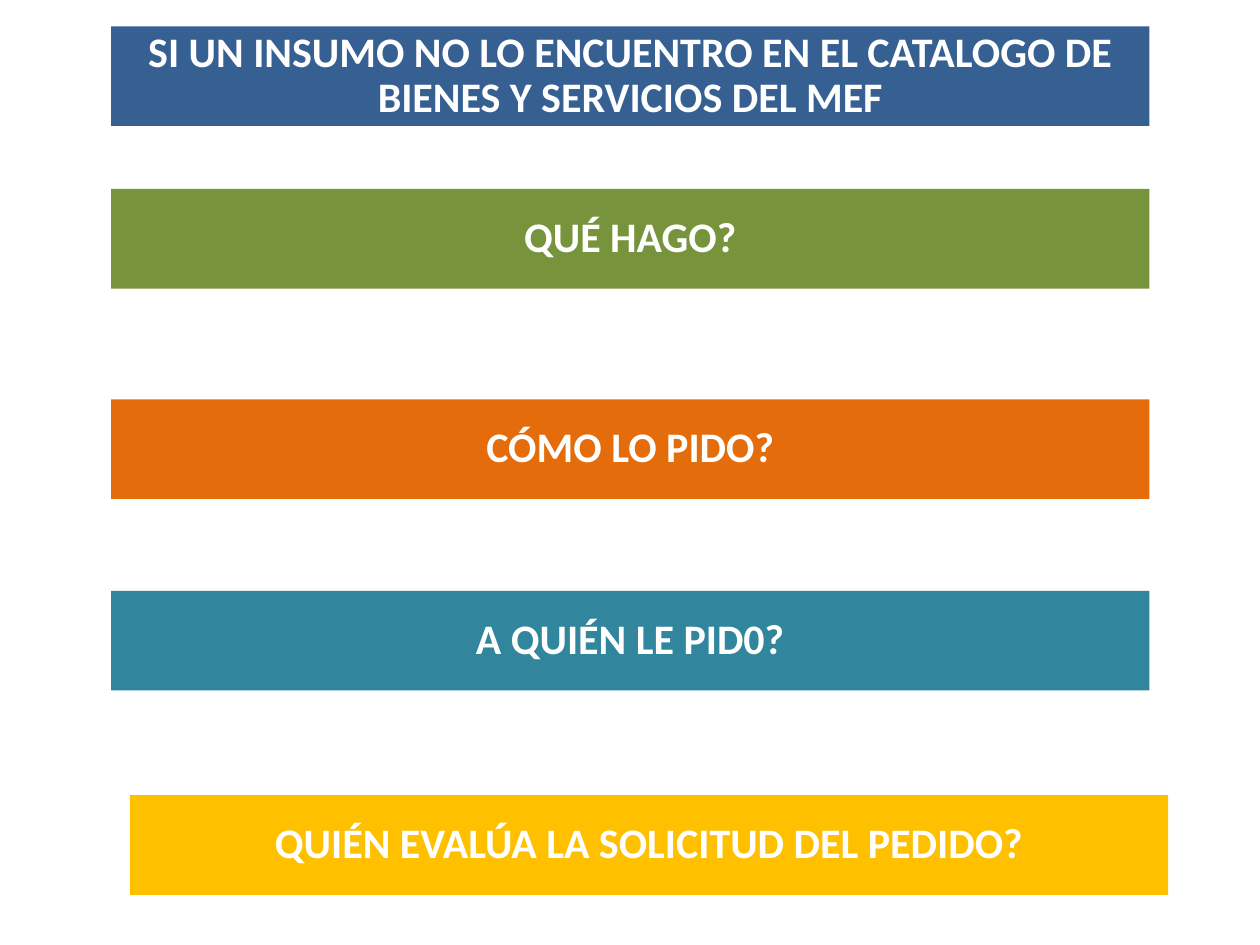
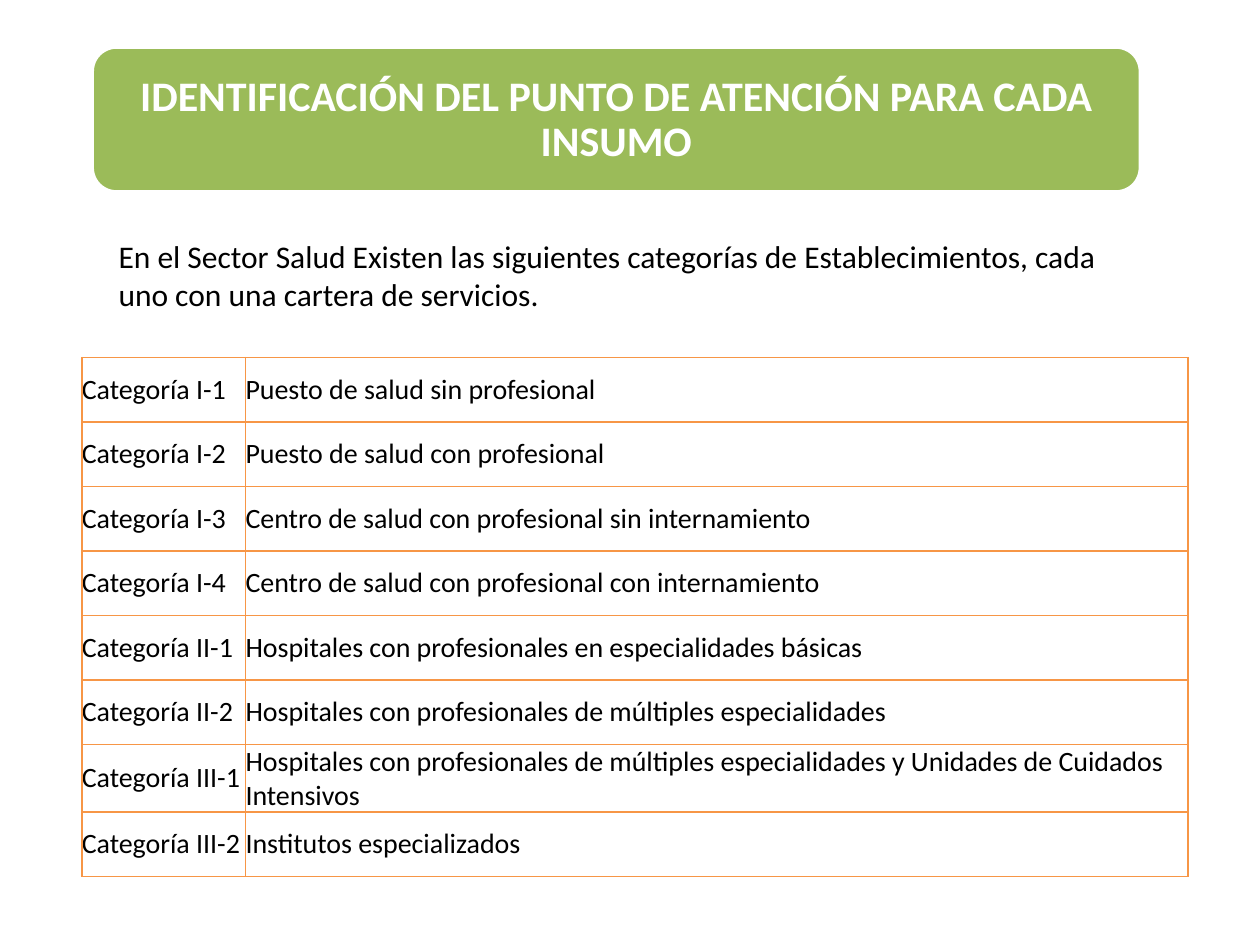
from dataclasses import dataclass

from lxml import etree
from pptx import Presentation
from pptx import util as u
from pptx.dml.color import RGBColor
from pptx.enum import shapes, text
from pptx.oxml import ns

FONT = "Calibri"
WHITE = RGBColor(0xFF, 0xFF, 0xFF)
BLACK = RGBColor(0x00, 0x00, 0x00)
NAVY = RGBColor(0x37, 0x60, 0x92)
OLIVE = RGBColor(0x77, 0x93, 0x3C)
ORANGE = RGBColor(0xE4, 0x6C, 0x0A)
TEAL = RGBColor(0x31, 0x85, 0x9C)
GOLD = RGBColor(0xFF, 0xC0, 0x00)
GREEN = RGBColor(0x9B, 0xBB, 0x59)
GRID_ORANGE = RGBColor(0xF7, 0x96, 0x46)

TITLE_ONLY = 5
BAND_LEFT = 2.24
BAND_WIDTH = 20.93
BAND_HEIGHT = 2.01
ROW_HEIGHT = 1.3
COLUMN_WIDTHS = (3.3, 19.0)


@dataclass(frozen=True)
class Box:
    """Position and size in centimetres."""
    left: float
    top: float
    width: float
    height: float

    def lengths(self) -> tuple:
        """Return the four values as lengths."""
        return tuple(u.Cm(v) for v in (self.left, self.top, self.width, self.height))


@dataclass(frozen=True)
class Question:
    """One coloured question band."""
    wording: str
    top: float
    color: RGBColor
    left: float = BAND_LEFT


QUESTIONS = (
    Question("QUÉ HAGO?", 3.81, OLIVE),
    Question("CÓMO LO PIDO?", 8.05, ORANGE),
    Question("A QUIÉN LE PID0?", 11.91, TEAL),
    Question("QUIÉN EVALÚA LA SOLICITUD DEL PEDIDO?", 16.03, GOLD, left=2.62),
)

CATEGORIES = (
    ("Categoría I-1", "Puesto de salud sin profesional"),
    ("Categoría I-2", "Puesto de salud con profesional"),
    ("Categoría I-3", "Centro de salud con profesional sin internamiento"),
    ("Categoría I-4", "Centro de salud con profesional con internamiento"),
    ("Categoría II-1", "Hospitales con profesionales en especialidades básicas"),
    ("Categoría II-2", "Hospitales con profesionales de múltiples especialidades"),
    ("Categoría III-1", "Hospitales con profesionales de múltiples especialidades "
                        "y Unidades de Cuidados Intensivos"),
    ("Categoría III-2", "Institutos especializados"),
)


def write(frame, wording: str, *, size: int, color=BLACK, bold=False,
          align=text.PP_ALIGN.LEFT, spacing=1.0) -> None:
    """Write one formatted paragraph."""
    paragraph = frame.paragraphs[0]
    paragraph.alignment = align
    paragraph.line_spacing = spacing
    run = paragraph.add_run()
    run.text = wording
    run.font.name = FONT
    run.font.size = u.Pt(size)
    run.font.bold = bold
    run.font.color.rgb = color


def write_heading(shape, wording: str) -> None:
    """Write bold white centred text inside a band or title."""
    frame = shape.text_frame
    frame.word_wrap = True
    frame.auto_size = text.MSO_AUTO_SIZE.NONE
    frame.vertical_anchor = text.MSO_ANCHOR.MIDDLE
    frame.margin_left = frame.margin_right = u.Cm(0.25)
    frame.margin_top = frame.margin_bottom = u.Cm(0.25)
    write(frame, wording, size=24, color=WHITE, bold=True,
          align=text.PP_ALIGN.CENTER, spacing=0.9)


def place_title(slide, wording: str, box: Box):
    """Move and format the title placeholder."""
    title = slide.shapes.title
    title.left, title.top, title.width, title.height = box.lengths()
    write_heading(title, wording)
    return title


def add_band(slide, box: Box, color: RGBColor, outline=shapes.MSO_SHAPE.RECTANGLE):
    """Add a filled band without line or shadow."""
    band = slide.shapes.add_shape(outline, *box.lengths())
    band.shadow.inherit = False
    band.fill.solid()
    band.fill.fore_color.rgb = color
    band.line.fill.background()
    return band


def border_cell(cell) -> None:
    """Draw the four cell borders ahead of the cell fill."""
    properties = cell._tc.get_or_add_tcPr()
    for position, side in enumerate(("lnL", "lnR", "lnT", "lnB")):
        line = etree.Element(ns.qn(f"a:{side}"), w=str(u.Pt(1)))
        solid = etree.SubElement(line, ns.qn("a:solidFill"))
        etree.SubElement(solid, ns.qn("a:srgbClr"), val=str(GRID_ORANGE))
        properties.insert(position, line)


def add_categories(slide) -> None:
    """Add the table of establishment categories."""
    box = Box(1.65, 7.21, sum(COLUMN_WIDTHS), ROW_HEIGHT * len(CATEGORIES))
    table = slide.shapes.add_table(
        len(CATEGORIES), len(COLUMN_WIDTHS), *box.lengths()).table
    table.first_row = table.horz_banding = False
    for column, width in zip(table.columns, COLUMN_WIDTHS):
        column.width = u.Cm(width)
    for row, entries in zip(table.rows, CATEGORIES):
        row.height = u.Cm(ROW_HEIGHT)
        for cell, wording in zip(row.cells, entries):
            cell.margin_left = cell.margin_right = 0
            cell.margin_top = cell.margin_bottom = 0
            cell.vertical_anchor = text.MSO_ANCHOR.MIDDLE
            cell.fill.background()
            border_cell(cell)
            write(cell.text_frame, wording, size=16)


def build_questions(slide) -> None:
    """Build the slide of questions about missing supplies."""
    title = place_title(
        slide, "SI UN INSUMO NO LO ENCUENTRO EN EL CATALOGO DE BIENES Y SERVICIOS DEL MEF",
        Box(BAND_LEFT, 0.53, BAND_WIDTH, BAND_HEIGHT))
    title.fill.solid()
    title.fill.fore_color.rgb = NAVY
    for question in QUESTIONS:
        box = Box(question.left, question.top, BAND_WIDTH, BAND_HEIGHT)
        write_heading(add_band(slide, box, question.color), question.wording)


def build_care_points(slide) -> None:
    """Build the slide of establishment categories."""
    title = place_title(slide, "IDENTIFICACIÓN DEL PUNTO DE ATENCIÓN PARA CADA INSUMO",
                        Box(2.0, 1.1, 20.85, 2.64))
    band = add_band(slide, Box(1.86, 0.95, 21.13, 2.92), GREEN,
                    shapes.MSO_SHAPE.ROUNDED_RECTANGLE)
    band.line.color.rgb = WHITE
    band.line.width = u.Pt(2)
    title.element.addprevious(band.element)
    intro = slide.shapes.add_textbox(*Box(2.14, 4.65, 20.62, 1.8).lengths())
    intro.text_frame.word_wrap = True
    write(intro.text_frame, "En el Sector Salud Existen las siguientes categorías de "
          "Establecimientos, cada uno con una cartera de servicios.", size=18)
    add_categories(slide)


def main() -> None:
    """Build and save the presentation."""
    deck = Presentation()
    deck.slide_width, deck.slide_height = u.Cm(25.4), u.Cm(19.05)
    for build in (build_questions, build_care_points):
        build(deck.slides.add_slide(deck.slide_layouts[TITLE_ONLY]))
    deck.save("out.pptx")


if __name__ == "__main__":
    main()
